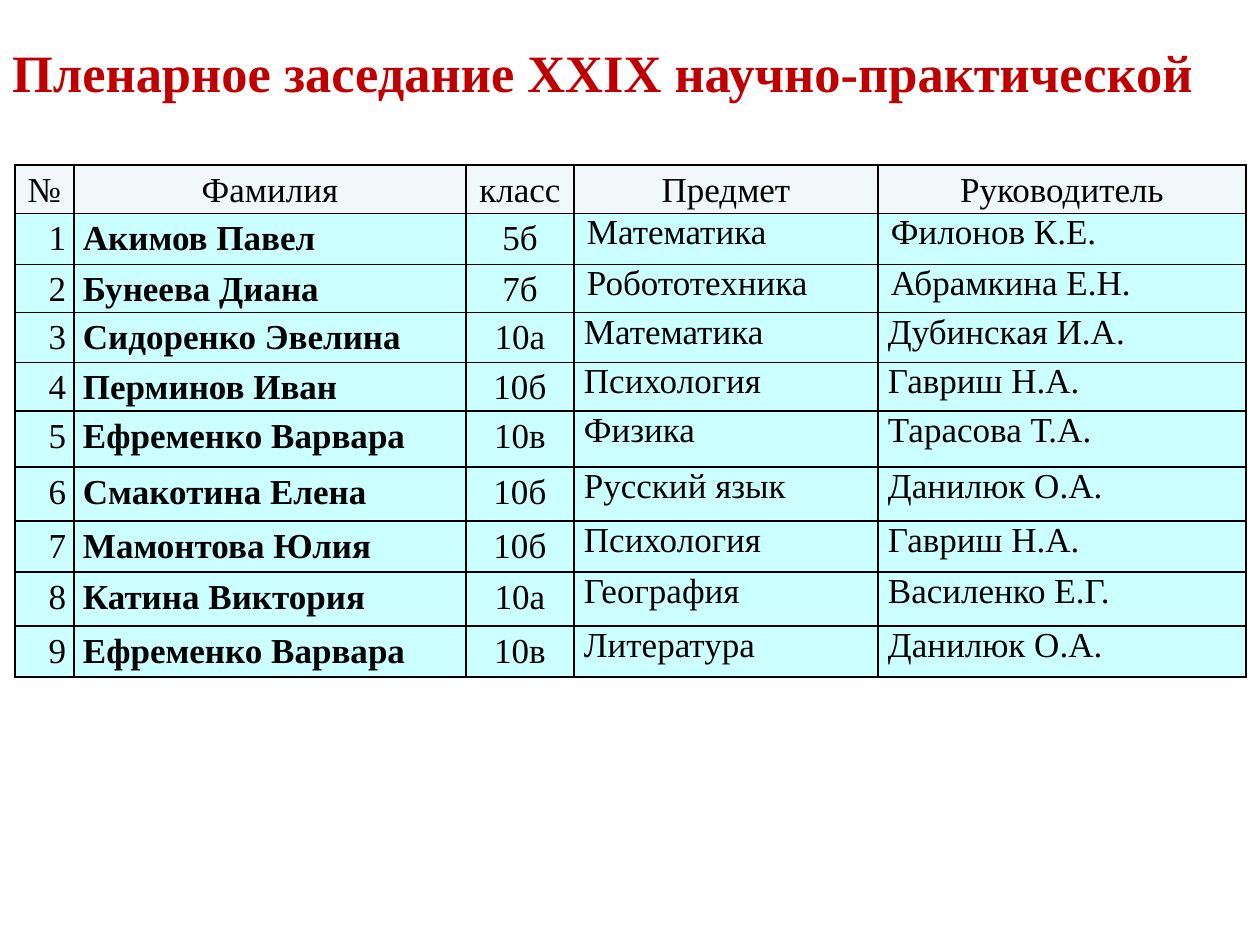
"""Build the slide listing the speakers of the plenary session."""
from dataclasses import dataclass

from lxml.etree import SubElement
from pptx import Presentation
from pptx.dml.color import RGBColor
from pptx.enum.text import MSO_ANCHOR, PP_ALIGN
from pptx.oxml.ns import qn
from pptx.slide import Slide
from pptx.table import _Cell
from pptx.util import Emu, Pt

SCALE = 914400 / 126
FONT = "Times New Roman"
RED = RGBColor(0xC0, 0x00, 0x00)
BLACK = RGBColor(0x00, 0x00, 0x00)
PALE = RGBColor(0xF0, 0xF8, 0xF9)
CYAN = RGBColor(0xCC, 0xFF, 0xFF)
LEFT, MID, RIGHT = PP_ALIGN.LEFT, PP_ALIGN.CENTER, PP_ALIGN.RIGHT


@dataclass(frozen=True)
class Column:
    head: str
    width: int
    align: PP_ALIGN
    inset: int
    bold: bool = False
    space: float = 1.15


@dataclass(frozen=True)
class Talk:
    name: str
    form: str
    topic: str
    tutor: str
    height: int
    indent: int = 0


COLUMNS = (
    Column("№", 59, RIGHT, 8),
    Column("Фамилия", 392, LEFT, 9, bold=True),
    Column("класс", 108, MID, 9),
    Column("Предмет", 304, LEFT, 10, space=1.0),
    Column("Руководитель", 368, LEFT, 10, space=1.0),
)
TALKS = (
    Talk("Акимов Павел", "5б", "Математика", "Филонов К.Е.", 51, 3),
    Talk("Бунеева Диана", "7б", "Робототехника", "Абрамкина Е.Н.", 48, 3),
    Talk("Сидоренко Эвелина", "10а", "Математика", "Дубинская И.А.", 50),
    Talk("Перминов Иван", "10б", "Психология", "Гавриш Н.А.", 48),
    Talk("Ефременко Варвара", "10в", "Физика", "Тарасова Т.А.", 56),
    Talk("Смакотина Елена", "10б", "Русский язык", "Данилюк О.А.", 54),
    Talk("Мамонтова Юлия", "10б", "Психология", "Гавриш Н.А.", 51),
    Talk("Катина Виктория", "10а", "География", "Василенко Е.Г.", 54),
    Talk("Ефременко Варвара", "10в", "Литература", "Данилюк О.А.", 51),
)
HEAD = 48


def px(value: int) -> Emu:
    return Emu(round(value * SCALE))


def assign(target: object, values: dict) -> None:
    for key, value in values.items():
        setattr(target, key, value)


def write(frame, text: str, align: PP_ALIGN, space: float, size: int,
          color: RGBColor, bold: bool) -> None:
    line = frame.paragraphs[0]
    assign(line, {"alignment": align, "line_spacing": space})
    run = line.add_run()
    run.text = text
    assign(run.font, {"name": FONT, "size": Pt(size), "bold": bold})
    run.font.color.rgb = color


def border(cell: _Cell) -> None:
    props = cell._tc.get_or_add_tcPr()
    for side in ("lnL", "lnR", "lnT", "lnB"):
        edge = SubElement(props, qn(f"a:{side}"), w=str(Pt(1)))
        fill = SubElement(edge, qn("a:solidFill"))
        SubElement(fill, qn("a:srgbClr"), val=str(BLACK))


def fill_cell(cell: _Cell, text: str, align: PP_ALIGN, inset: int,
              indent: int, space: float, bold: bool, back: RGBColor) -> None:
    assign(cell, {
        "margin_left": px(inset + indent), "margin_right": px(inset),
        "margin_top": 0, "margin_bottom": 0,
    })
    write(cell.text_frame, text, align, space, 20, BLACK, bold)
    border(cell)
    cell.fill.solid()
    cell.fill.fore_color.rgb = back


def add_title(slide: Slide) -> None:
    box = slide.shapes.add_textbox(0, px(34), px(1260), px(70))
    frame = box.text_frame
    assign(frame, {
        "word_wrap": True, "vertical_anchor": MSO_ANCHOR.MIDDLE,
        "margin_left": 0, "margin_right": px(54),
        "margin_top": px(6), "margin_bottom": 0,
    })
    write(frame, "Пленарное заседание XXIX научно-практической",
          MID, 1.0, 30, RED, True)


def add_talks(slide: Slide) -> None:
    heights = [HEAD, *(talk.height for talk in TALKS)]
    wide = sum(column.width for column in COLUMNS)
    table = slide.shapes.add_table(
        len(heights), len(COLUMNS), px(15), px(165), px(wide), px(sum(heights))
    ).table
    assign(table, {"first_row": False, "horz_banding": False})
    for row, height in zip(table.rows, heights):
        row.height = px(height)
    for col, column in enumerate(COLUMNS):
        table.columns[col].width = px(column.width)
        fill_cell(table.cell(0, col), column.head, MID, 8, 0, 1.15, False, PALE)
    for row, talk in enumerate(TALKS, 1):
        texts = (str(row), talk.name, talk.form, talk.topic, talk.tutor)
        for col, (column, text) in enumerate(zip(COLUMNS, texts)):
            indent = talk.indent if col > 2 else 0
            fill_cell(table.cell(row, col), text, column.align, column.inset,
                      indent, column.space, column.bold, CYAN)


def main() -> None:
    deck = Presentation()
    assign(deck, {"slide_width": px(1260), "slide_height": px(945)})
    slide = deck.slides.add_slide(deck.slide_layouts[6])
    add_title(slide)
    add_talks(slide)
    deck.save("out.pptx")


if __name__ == "__main__":
    main()
